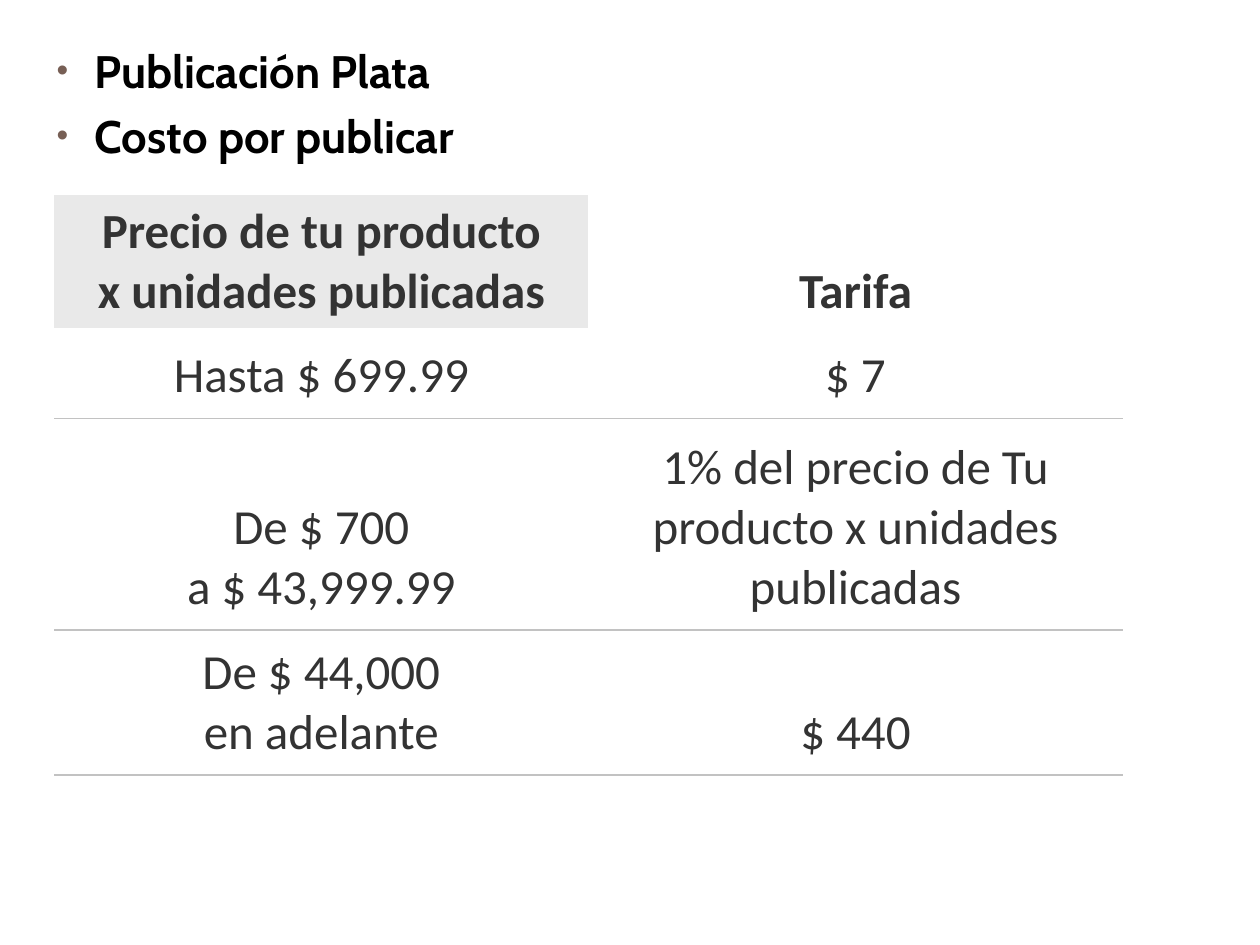
from lxml.etree import SubElement
from pptx import Presentation
from pptx.dml.color import RGBColor
from pptx.enum.text import MSO_ANCHOR, MSO_AUTO_SIZE, PP_ALIGN
from pptx.oxml import parse_xml
from pptx.oxml.ns import nsdecls, qn
from pptx.util import Inches, Pt

THEME = {
    "head": {"name": "Cabin", "size": Pt(26), "bold": True},
    "cell": {"name": "Calibri", "size": Pt(28)},
    "black": "000000", "text": "333333", "mark": "775F55",
    "fill": "E9E9E9", "rule": "C2C2C2",
}


def style(para, form, color):
    for key, value in form.items():
        setattr(para.font, key, value)
    para.font.color.rgb = RGBColor.from_string(color)


deck = Presentation()
deck.slide_width, deck.slide_height = Inches(10), Inches(7.5)
slide = deck.slides.add_slide(deck.slide_layouts[1])
title = slide.shapes.title
title.element.getparent().remove(title.element)

# Bulleted heading
body = slide.placeholders[1]
body.left, body.top = Inches(0.35), Inches(0.29)
body.width, body.height = Inches(4.41), Inches(1.12)
frame = body.text_frame
frame.word_wrap = True
frame.auto_size = MSO_AUTO_SIZE.NONE
frame.vertical_anchor = MSO_ANCHOR.TOP
for i, line in enumerate(["Publicación Plata", "Costo por publicar"]):
    para = frame.add_paragraph() if i else frame.paragraphs[0]
    para.text = line
    para.space_before = Pt(6 if i else 0)
    props = para._p.get_or_add_pPr()
    props.set("marL", str(Inches(0.3)))
    props.set("indent", str(-Inches(0.3)))
    tint = SubElement(props, qn("a:buClr"))
    SubElement(tint, qn("a:srgbClr"), val=THEME["mark"])
    SubElement(props, qn("a:buSzPct"), val="73000")
    SubElement(props, qn("a:buFont"), typeface="Arial")
    SubElement(props, qn("a:buChar"), char="•")
    style(para, THEME["head"], THEME["black"])

# Price table
rows = [
    ("Precio de tu producto\nx unidades publicadas", "Tarifa"),
    ("Hasta $ 699.99", "$ 7"),
    ("De $ 700\na $ 43,999.99", "1% del precio de Tu producto x unidades publicadas"),
    ("De $ 44,000\nen adelante", "$ 440"),
]
tall = [0.94, 0.72, 1.68, 1.04]
grid = slide.shapes.add_table(len(rows), 2, Inches(0.43), Inches(1.55),
                              Inches(8.47), Inches(sum(tall)))
table = grid.table
table.first_row = table.horz_banding = False
# Table style without fills or grid lines
table._tbl.tblPr.find(qn("a:tableStyleId")).text = "{2D5ABB26-0587-4C30-8999-92F81FD0307C}"
for col in table.columns:
    col.width = Inches(4.24)

for r, row in enumerate(rows):
    table.rows[r].height = Inches(tall[r])
    for c, text in enumerate(row):
        cell = table.cell(r, c)
        cell.vertical_anchor = MSO_ANCHOR.BOTTOM
        cell.margin_left = cell.margin_right = Inches(0.1)
        cell.margin_top = cell.margin_bottom = Inches(0.1 if r else 0.05)
        para = cell.text_frame.paragraphs[0]
        para.text = text
        para.alignment = PP_ALIGN.CENTER
        para.space_after = Pt(10)
        style(para, THEME["cell"] | {"bold": r == 0}, THEME["text"])
        # Grey first heading, ruled body rows
        if r == c == 0:
            cell.fill.solid()
            cell.fill.fore_color.rgb = RGBColor.from_string(THEME["fill"])
        else:
            cell.fill.background()
        if r:
            cell._tc.get_or_add_tcPr().insert(0, parse_xml(
                f'<a:lnB {nsdecls("a")} w="{Pt(1)}"><a:solidFill>'
                f'<a:srgbClr val="{THEME["rule"]}"/></a:solidFill></a:lnB>'))

deck.save("out.pptx")
